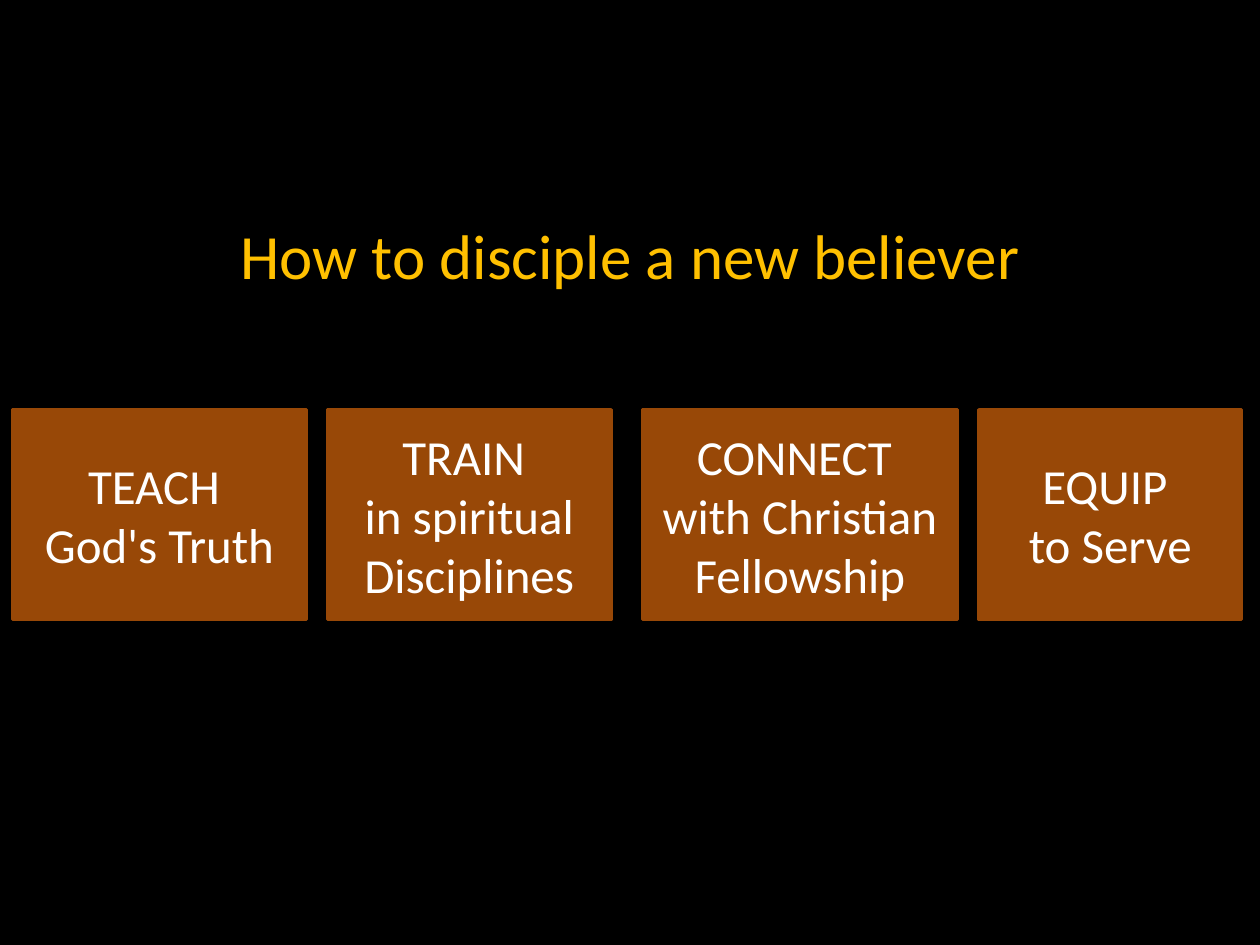
from pptx import Presentation
from pptx.dml.color import RGBColor
from pptx.enum.shapes import MSO_SHAPE
from pptx.enum.text import MSO_ANCHOR, PP_ALIGN
from pptx.util import Cm, Pt

RECTANGLE = MSO_SHAPE.RECTANGLE
TOP, MIDDLE = MSO_ANCHOR.TOP, MSO_ANCHOR.MIDDLE
CENTER = PP_ALIGN.CENTER

COLORS = {"background": "000000", "title": "FFC000", "step": "984807", "text": "FFFFFF"}
FONT = "Calibri"
SLIDE_WIDTH, SLIDE_HEIGHT = Cm(25.4), Cm(19.05)
STEP_TOP, STEP_HEIGHT = Cm(8.26), Cm(4.23)

STEPS = [
    (0.25, 5.93, "TEACH ", "God's Truth"),
    (6.6, 5.72, "TRAIN ", "in spiritual Disciplines"),
    (12.95, 6.35, "CONNECT ", "with Christian Fellowship"),
    (19.74, 5.29, "EQUIP ", "to Serve"),
]


def color(name):
    return RGBColor.from_string(COLORS[name])


def write_lines(frame, lines, size, color_name, anchor):
    frame.word_wrap = True
    frame.vertical_anchor = anchor
    frame.text = "\n".join(lines)
    for line in frame.paragraphs:
        line.alignment = CENTER
        line.font.name = FONT
        line.font.size = Pt(size)
        line.font.color.rgb = color(color_name)


def add_title(slide, wording):
    title = slide.shapes.title
    title.left, title.top = Cm(0), Cm(4.23)
    title.width, title.height = SLIDE_WIDTH, Cm(1.8)
    write_lines(title.text_frame, [wording], 36, "title", TOP)


def add_step(slide, left, width, action, detail):
    step = slide.shapes.add_shape(RECTANGLE, Cm(left), STEP_TOP, Cm(width), STEP_HEIGHT)
    step.shadow.inherit = False
    step.fill.solid()
    step.fill.fore_color.rgb = color("step")
    step.line.color.rgb = color("step")
    step.line.width = Pt(2)
    write_lines(step.text_frame, [action, detail], 28, "text", MIDDLE)


def main():
    deck = Presentation()
    deck.slide_width, deck.slide_height = SLIDE_WIDTH, SLIDE_HEIGHT
    slide = deck.slides.add_slide(deck.slide_layouts.get_by_name("Title Only"))
    slide.background.fill.solid()
    slide.background.fill.fore_color.rgb = color("background")
    add_title(slide, "How to disciple a new believer")
    for step in STEPS:
        add_step(slide, *step)
    deck.save("out.pptx")


if __name__ == "__main__":
    main()
